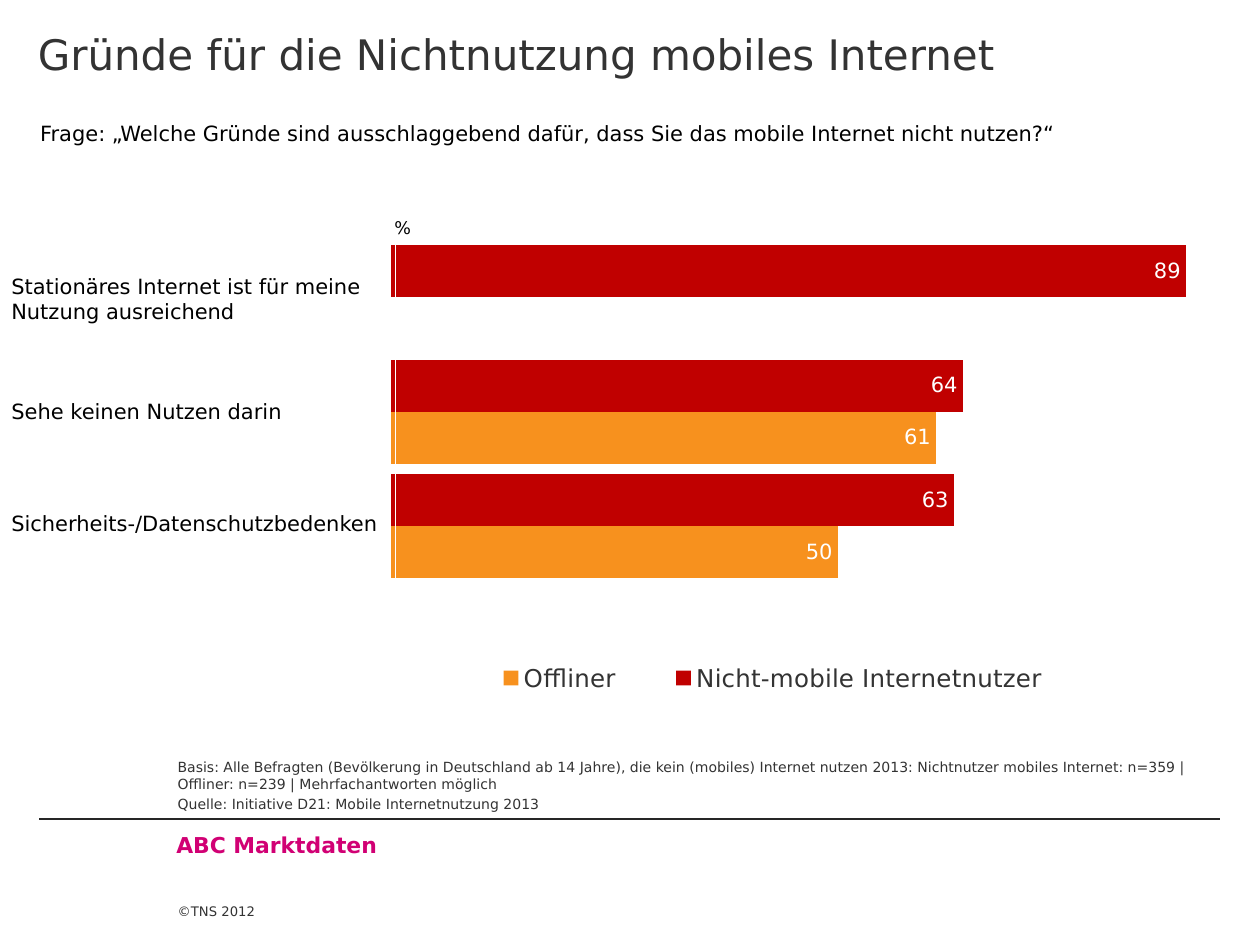
from pptx import Presentation
from pptx.chart.data import CategoryChartData
from pptx.dml.color import RGBColor
from pptx.enum.chart import XL_CHART_TYPE, XL_LABEL_POSITION, XL_LEGEND_POSITION
from pptx.enum.shapes import MSO_CONNECTOR
from pptx.enum.text import MSO_ANCHOR
from pptx.oxml import parse_xml
from pptx.oxml.ns import nsdecls, qn
from pptx.util import Inches, Pt
from lxml import etree

BAR = XL_CHART_TYPE.BAR_CLUSTERED
INSIDE_END = XL_LABEL_POSITION.INSIDE_END
RIGHT = XL_LEGEND_POSITION.RIGHT
STRAIGHT = MSO_CONNECTOR.STRAIGHT
TOP, MIDDLE, BOTTOM = MSO_ANCHOR.TOP, MSO_ANCHOR.MIDDLE, MSO_ANCHOR.BOTTOM

DARK, BLACK, WHITE = "333333", "000000", "FFFFFF"
RED, ORANGE, PINK = "C00000", "F7911E", "D10074"


def rgb(value):
    return RGBColor.from_string(value)


def format_font(font, size, color, bold=False):
    font.name = "DejaVu Sans"
    font.size = Pt(size)
    font.bold = bold
    font.color.rgb = rgb(color)


def write_text(tf, *texts, size=12, color=BLACK, bold=False, gap=0):
    for i, text in enumerate(texts):
        p = tf.paragraphs[0] if i == 0 else tf.add_paragraph()
        if i:
            p.space_before = Pt(gap)
        r = p.add_run()
        r.text = text
        format_font(r.font, size, color, bold)


def set_layout(parent, index, box, inner=False):
    for old in parent.findall(qn("c:layout")):
        parent.remove(old)
    target = '<c:layoutTarget val="inner"/>' if inner else ""
    modes = "".join(f'<c:{k}Mode val="edge"/>' for k in "xy")
    sizes = "".join(f'<c:{k} val="{v}"/>' for k, v in zip("xywh", box))
    parent.insert(index, parse_xml(
        f'<c:layout {nsdecls("c")}><c:manualLayout>{target}{modes}{sizes}'
        '</c:manualLayout></c:layout>'))


class Slide:
    def __init__(self, prs):
        self.s = prs.slides.add_slide(prs.slide_layouts[6])

    def text(self, box, *texts, insets=(0, 0, 0, 0), anchor=TOP, **style):
        sp = self.s.shapes.add_textbox(*map(Inches, box))
        tf = sp.text_frame
        tf.word_wrap = True
        tf.vertical_anchor = anchor
        (tf.margin_left, tf.margin_top,
         tf.margin_right, tf.margin_bottom) = map(Inches, insets)
        write_text(tf, *texts, **style)

    def line(self, x1, y1, x2, y2, color):
        sp = self.s.shapes.add_connector(STRAIGHT, *map(Inches, (x1, y1, x2, y2)))
        sp.line.color.rgb = rgb(color)
        sp.line.width = Pt(0.75)
        etree.SubElement(sp._element.spPr, qn("a:effectLst"))

    def labels(self, box, texts):
        table = self.s.shapes.add_table(len(texts), 1, *map(Inches, box)).table
        table.first_row = table.horz_banding = False
        for i, text in enumerate(texts):
            cell = table.cell(i, 0)
            cell.fill.background()
            cell.vertical_anchor = MIDDLE
            cell.margin_left = cell.margin_top = cell.margin_right = Inches(0.01)
            cell.margin_bottom = 0
            write_text(cell.text_frame, text)

    def bars(self, box, categories, series):
        data = CategoryChartData(number_format="#,##0")
        data.categories = categories
        for name, values, _ in series:
            data.add_series(name, values)
        chart = self.s.shapes.add_chart(BAR, *map(Inches, box), data).chart
        format_font(chart.font, 18, BLACK)
        chart.has_title = False
        chart.category_axis.reverse_order = True
        chart.category_axis.visible = False
        axis = chart.value_axis
        axis.minimum_scale, axis.maximum_scale = 0, 90
        axis.has_major_gridlines = False
        axis.visible = False
        plot = chart.plots[0]
        plot.gap_width, plot.overlap = 20, 0
        plot.vary_by_categories = False
        for item, (_, _, color) in zip(plot.series, series):
            item.format.fill.solid()
            item.format.fill.fore_color.rgb = rgb(color)
            labels = item.data_labels
            labels.show_value = True
            labels.position = INSIDE_END
            labels.number_format = "#,##0"
            labels.number_format_is_linked = False
            format_font(labels.font, 12, WHITE)
        chart.has_legend = True
        legend = chart.legend
        legend.position = RIGHT
        legend.include_in_layout = False
        format_font(legend.font, 14, DARK)
        set_layout(legend._element, 1, (0.2, 0.84, 0.64, 0.07))
        plot_area = chart._chartSpace.chart.plotArea
        set_layout(plot_area, 0, (0.14, 0.16, 0.8, 0.56), inner=True)


def main():
    prs = Presentation()
    prs.slide_width, prs.slide_height = Inches(10), Inches(7.5)
    slide = Slide(prs)
    slide.text((1.41, 6.92, 0.83, 0.58), "©TNS 2012", size=7.5, color=DARK,
               insets=(0, 0, 0, 0.29), anchor=BOTTOM)
    slide.line(0.31, 6.5, 9.68, 6.5, "262626")
    slide.text((0.86, 6.5, 8.26, 0.41), "ABC Marktdaten", size=12.5, color=PINK,
               bold=True, insets=(0.54, 0.1, 0.1, 0.05))
    slide.text((0, 0, 10, 1.13), "Gründe für die Nichtnutzung mobiles Internet",
               size=24, color=DARK, insets=(0.3, 0.23, 0.3, 0))
    slide.text((1.41, 6.09, 8.27, 0.48),
               "Basis: Alle Befragten (Bevölkerung in Deutschland ab 14 Jahre), "
               "die kein (mobiles) Internet nutzen 2013: Nichtnutzer mobiles "
               "Internet: n=359 | Offliner: n=239 | Mehrfachantworten möglich",
               "Quelle: Initiative D21: Mobile Internetnutzung 2013",
               size=8, color=DARK, gap=2, insets=(0, 0, 0, 0.12), anchor=BOTTOM)
    slide.bars((1.99, 1.13, 7.97, 4.86), ("1", "2", "3"),
               (("Nicht-mobile Internetnutzer", (89, 64, 63), RED),
                ("Offliner", (None, 61, 50), ORANGE)))
    slide.text((3.13, 1.71, 0.3, 0.2), "%", size=10, anchor=MIDDLE)
    slide.labels((0.08, 1.93, 3.06, 2.67),
                 ("Stationäres Internet ist für meine Nutzung ausreichend",
                  "Sehe keinen Nutzen darin",
                  "Sicherheits-/Datenschutzbedenken"))
    slide.text((0.22, 0.91, 9.1, 0.3),
               "Frage: „Welche Gründe sind ausschlaggebend dafür, "
               "dass Sie das mobile Internet nicht nutzen?“",
               insets=(0.1, 0.05, 0.1, 0.05))
    prs.save("out.pptx")


if __name__ == "__main__":
    main()
